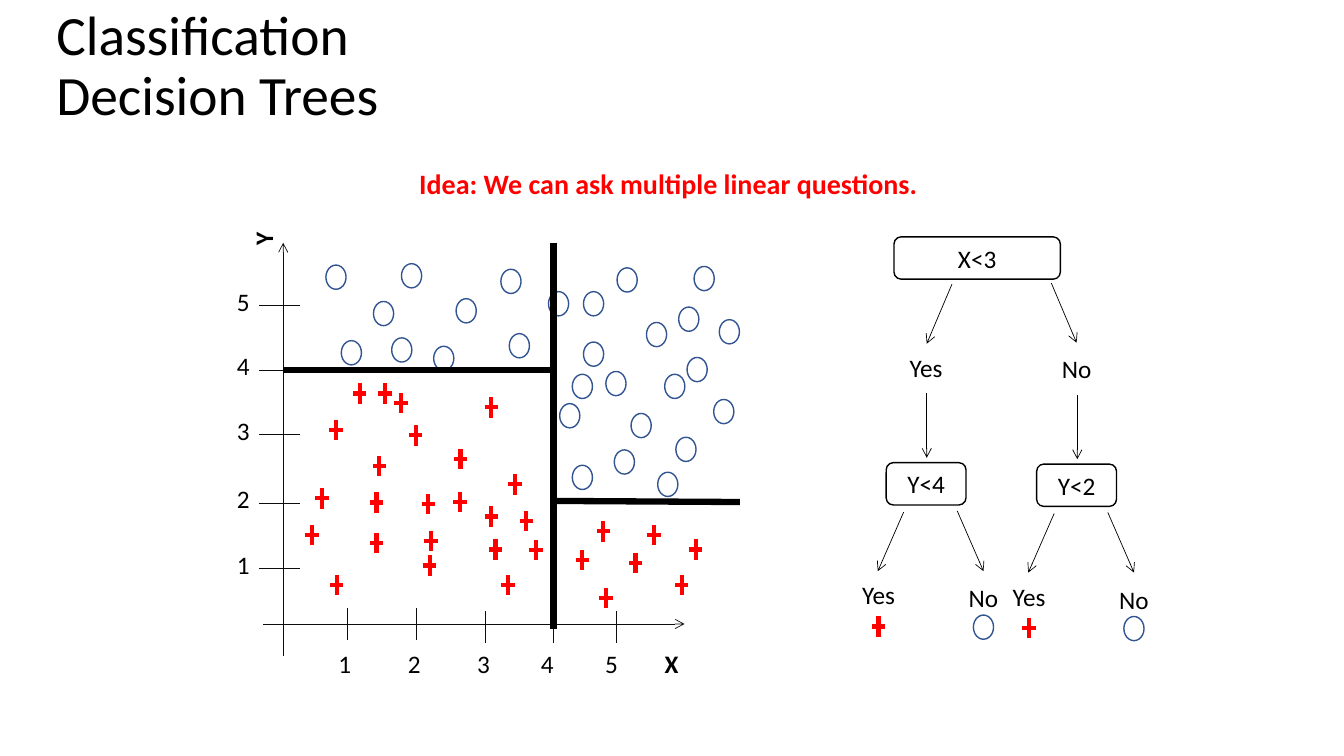
"""Build a slide that explains classification with decision trees."""
from lxml import etree
from pptx import Presentation
from pptx.dml.color import RGBColor
from pptx.enum.shapes import MSO_CONNECTOR, MSO_SHAPE
from pptx.enum.text import MSO_ANCHOR, MSO_AUTO_SIZE, PP_ALIGN
from pptx.oxml.ns import qn
from pptx.util import Pt

STRAIGHT = MSO_CONNECTOR.STRAIGHT
OVAL, ROUND = MSO_SHAPE.OVAL, MSO_SHAPE.ROUNDED_RECTANGLE
MIDDLE, FIXED = MSO_ANCHOR.MIDDLE, MSO_AUTO_SIZE.NONE
LEFT, CENTER, RIGHT = PP_ALIGN.LEFT, PP_ALIGN.CENTER, PP_ALIGN.RIGHT

BLACK = RGBColor(0, 0, 0)
DARK = RGBColor(0x0D, 0x0D, 0x0D)
RED = RGBColor(0xFF, 0, 0)
BLUE = RGBColor(0x32, 0x54, 0x91)
FONT = "Calibri"

TITLE = "Classification\vDecision Trees"
IDEA = "Idea: We can ask multiple linear questions."

AXES = [(188, 445.7, 489, 445.7), (202.3, 468.7, 202.3, 173.5)]
ROWS = [("5", 218.2), ("4", 264.2), ("3", 310.3), ("2", 359.3), ("1", 406.1)]
COLS = [(248.4, 434.2), (297.4, 434.2), (347, 436.3), (395.3, 436.3), (440.6, 436.3)]
SCALE = ["1", "2", "3", "4", "5", "X"]
TABS = [49.5, 99, 144.5, 190.5, 233]

RINGS = [
    (503, 199), (287, 250), (448, 200), (416, 276), (399, 217), (424, 253), (416, 341),
    (521, 237), (498, 264), (424, 217), (469, 239), (517, 294), (490, 321), (482, 276),
    (458, 304), (294, 197), (240, 198), (333, 222), (274, 224), (251, 252), (317, 256),
    (365, 201), (371, 247), (407, 297), (477, 346), (446, 330), (440, 274), (492, 228),
]
PLUSES = [
    (269, 359), (240.5, 418), (307, 404), (240, 307), (363, 418), (230, 356),
    (286.5, 288), (306, 360), (297, 311), (383, 393), (329, 328), (271, 333),
    (416, 400), (433, 427), (487, 418), (368, 346), (454, 402), (376, 372),
    (467, 382), (257, 281), (351, 291), (328.5, 358.5), (497, 392.5), (431, 379.5),
    (351, 369), (308, 386.5), (354, 392.5), (275, 281), (223, 382), (269, 388),
]
SPLITS = [(395.3, 173.5, 395.3, 449.3), (395.3, 264.2, 202.3, 264.2),
          (528.5, 358.6, 393.8, 357.8)]

ROOT = "X<3"
BRANCHES = [("Yes", "Y<4", 661.5, 248), ("No", "Y<2", 769, 249)]
ARROWS = [(680, 203, 662, 245.5), (751, 202.3, 769, 244.8)]

RING_W, RING_H = 14.4, 17.3
PLUS_W, PLUS_H = 9.6, 14.6
TEXT_H, BOX_H = 28.8, 30.2


def line(shapes, ends, color, width, arrow=False):
    item = shapes.add_connector(STRAIGHT, *map(Pt, ends))
    item.line.color.rgb = color
    item.line.width = Pt(width)
    props = item._element.spPr
    if arrow:
        tail = etree.SubElement(props.find(qn("a:ln")), qn("a:tailEnd"))
        tail.set("type", "arrow")
    etree.SubElement(props, qn("a:effectLst"))


def style(part, color=BLACK, size=18, bold=False):
    for run in part.runs:
        run.font.name = FONT
        run.font.size = Pt(size)
        run.font.bold = bold
        run.font.color.rgb = color


def label(shapes, text, place, align=CENTER, **look):
    box = shapes.add_textbox(*map(Pt, place))
    box.text_frame.word_wrap = True
    box.text_frame.text = text
    part = box.text_frame.paragraphs[0]
    part.alignment = align
    style(part, **look)
    return box


def shape(shapes, kind, place, color):
    item = shapes.add_shape(kind, *map(Pt, place))
    item.shadow.inherit = False
    item.fill.background()
    item.line.color.rgb = color
    item.line.width = Pt(1)
    return item


def ring(shapes, x, y):
    shape(shapes, OVAL, (x - RING_W / 2, y - RING_H / 2, RING_W, RING_H), BLUE)


def plus(shapes, x, y):
    parts = shapes.add_group_shape().shapes
    line(parts, (x, y - PLUS_H / 2, x, y + PLUS_H / 2), RED, 3)
    line(parts, (x - PLUS_W / 2, y, x + PLUS_W / 2, y), RED, 3)


def node(shapes, text, x, y, width):
    item = shape(shapes, ROUND, (x - width / 2, y, width, BOX_H), BLACK)
    frame = item.text_frame
    frame.text = text
    frame.vertical_anchor = MIDDLE
    frame.paragraphs[0].alignment = CENTER
    style(frame.paragraphs[0])


def answer(shapes, text, x, y):
    label(shapes, text, (x - 28.5, y, 57, TEXT_H))


def heading(shapes):
    title = shapes.title
    title.left, title.top, title.width, title.height = map(Pt, (33, 10.8, 736.6, 75))
    frame = title.text_frame
    frame.text = TITLE
    frame.auto_size = FIXED
    frame.vertical_anchor = MIDDLE
    part = frame.paragraphs[0]
    part.alignment = LEFT
    part.line_spacing = 0.9
    style(part, size=39.6)
    label(shapes, IDEA, (269.3, 115.2, 416.2, 31.7), color=RED, size=20, bold=True)


def scale(shapes):
    box = label(shapes, "\t".join(SCALE[:-1]) + "\t", (234.7, 459.4, 269.3, TEXT_H), LEFT)
    part = box.text_frame.paragraphs[0]
    stops = etree.SubElement(part._p.get_or_add_pPr(), qn("a:tabLst"))
    for place in TABS:
        stop = etree.SubElement(stops, qn("a:tab"))
        stop.set("pos", str(int(Pt(place))))
        stop.set("algn", "l")
    part.add_run().text = SCALE[-1]
    style(part)
    part.runs[-1].font.bold = True


def plot(shapes):
    for ends in AXES:
        line(shapes, ends, DARK, 0.5, True)
    for text, y in ROWS:
        line(shapes, (185, y, 214, y), DARK, 0.5)
        label(shapes, text, (116.5, y - 17.3, 69, TEXT_H), RIGHT)
    for x, y in COLS:
        line(shapes, (x, y, x, y + 23), DARK, 0.5)
    scale(shapes)
    label(shapes, "Y", (154.8, 156.2, 66.2, TEXT_H), bold=True).rotation = 270
    for spot in RINGS:
        ring(shapes, *spot)
    for spot in PLUSES:
        plus(shapes, *spot)
    for ends in SPLITS:
        line(shapes, ends, BLACK, 4.5)


def tree(shapes):
    node(shapes, ROOT, 698, 169.2, 118.8)
    for ends in ARROWS:
        line(shapes, ends, BLACK, 0.5, True)
    for reply, test, x, y in BRANCHES:
        answer(shapes, reply, x, y)
        line(shapes, (x + 0.5, y + 33, x + 0.5, y + 79), BLACK, 0.5, True)
        node(shapes, test, x, y + 82.5, 57)
        line(shapes, (x - 16, y + 117.8, x - 34.5, y + 160), BLACK, 0.5, True)
        line(shapes, (x + 22.3, y + 117, x + 41, y + 160), BLACK, 0.5, True)
        answer(shapes, "Yes", x - 34, y + 162.5)
        answer(shapes, "No", x + 41, y + 164.5)
        plus(shapes, x - 34, y + 199.5)
        ring(shapes, x + 41, y + 200)


def main():
    deck = Presentation()
    deck.slide_width, deck.slide_height = Pt(960), Pt(540)
    shapes = deck.slides.add_slide(deck.slide_layouts[5]).shapes
    heading(shapes)
    plot(shapes)
    tree(shapes)
    deck.save("out.pptx")


if __name__ == "__main__":
    main()
